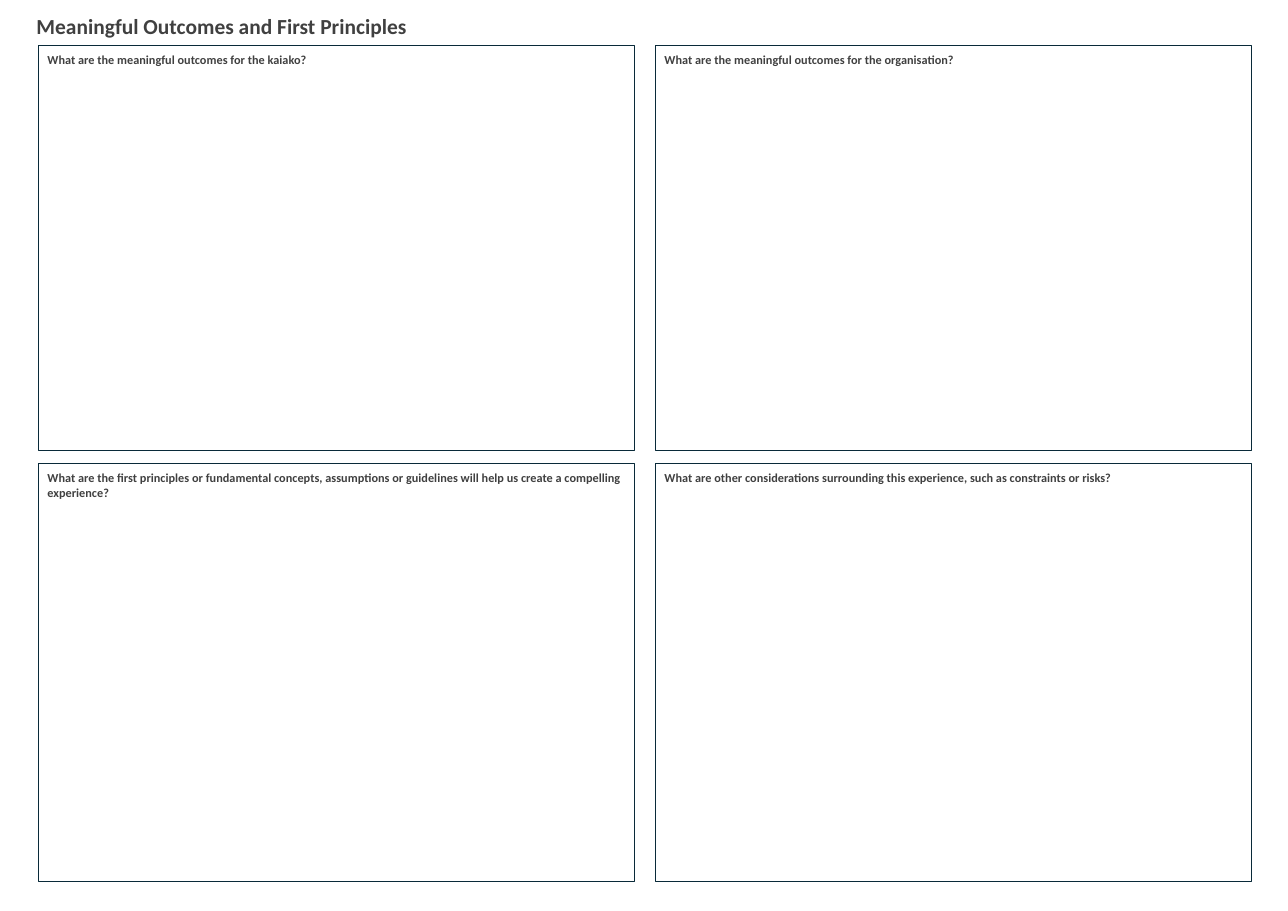
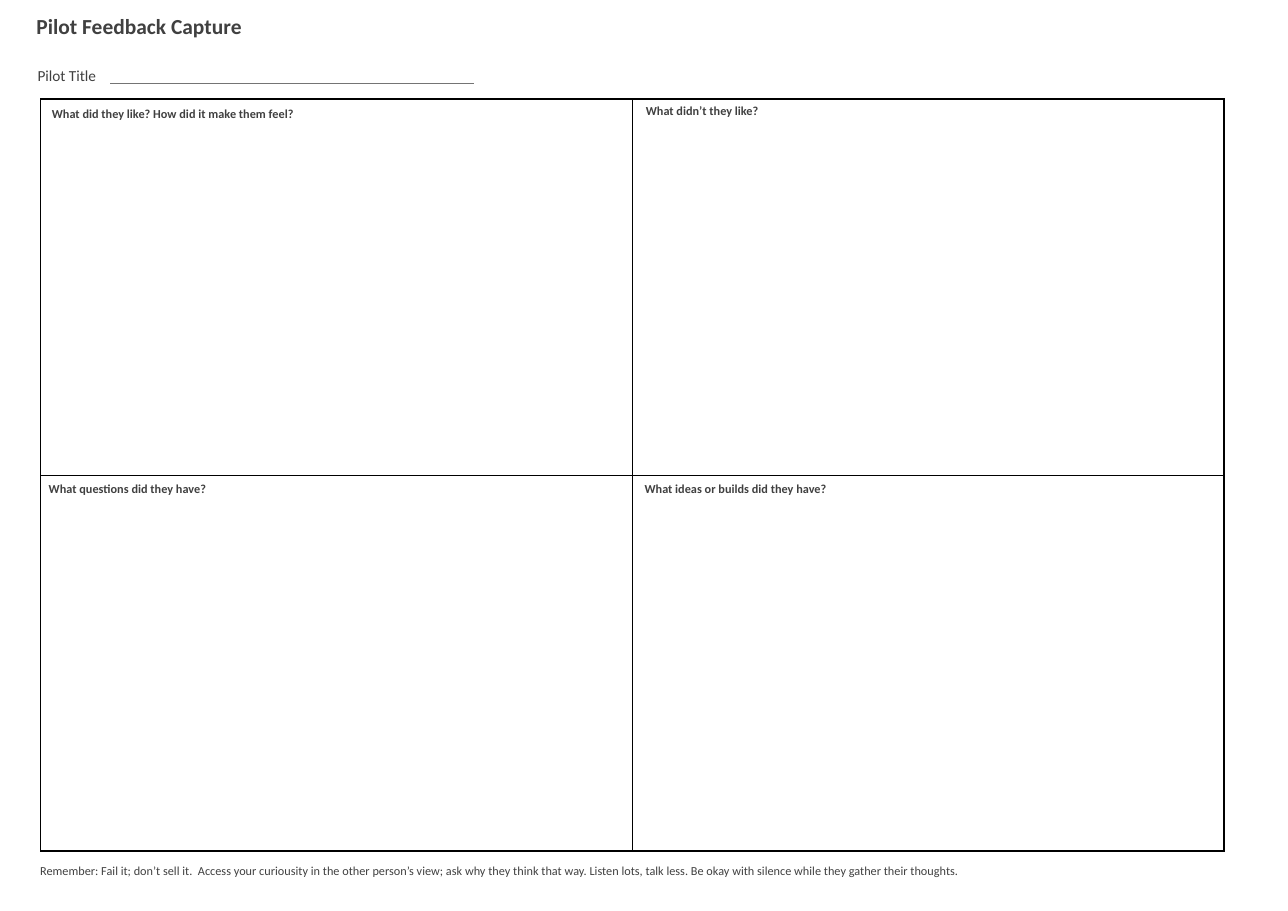
from itertools import product

from lxml.etree import SubElement
from pptx import Presentation
from pptx.dml.color import RGBColor
from pptx.enum.shapes import MSO_CONNECTOR as CONNECTOR, MSO_SHAPE as SHAPE
from pptx.enum.text import MSO_ANCHOR as ANCHOR, MSO_AUTO_SIZE as AUTO_SIZE, PP_ALIGN as ALIGN
from pptx.oxml.ns import qn
from pptx.util import Pt

INK = "404040"
FRAME = "092A39"
RULE = "747474"
GRID = "000000"
TITLE_ONLY = 5

TITLE = {"size": Pt(14), "bold": True}
QUESTION = {"size": Pt(8), "bold": True}
NOTE = {"size": Pt(8), "bold": False}
LABEL = {"size": Pt(10), "bold": False}
TITLE_INSETS = (7.2, 3.6)
BODY_INSETS = (2.2, 2.2)

OUTCOME_QUESTIONS = [
    ["What are the meaningful outcomes for the kaiako?",
     "What are the meaningful outcomes for the organisation?"],
    ["What are the first principles or fundamental concepts, assumptions or "
     "guidelines will help us create a compelling experience?",
     "What are other considerations surrounding this experience, such as constraints or risks?"],
]
FEEDBACK_QUESTIONS = [
    ("What did they like? How did it make them feel?", (31.7, 67, 377.3, 23)),
    ("What didn’t they like?", (419.8, 65.5, 207.4, 13.7)),
    ("What questions did they have?", (29.6, 312.5, 289.4, 16.6)),
    ("What ideas or builds did they have?", (419, 312.5, 207.4, 16.6)),
]
REMINDER = ("Remember: Fail it; don’t sell it.  Access your curiousity in the other person’s view; "
            "ask why they think that way. Listen lots, talk less. "
            "Be okay with silence while they gather their thoughts.")


def colour(value):
    return RGBColor.from_string(value)


def set_all(target, values):
    for name, value in values.items():
        setattr(target, name, value)


def points(*lengths):
    return [Pt(length) for length in lengths]


def write(frame, text, style, insets):
    side, top = points(*insets)
    set_all(frame, {
        "text": text, "word_wrap": True, "auto_size": AUTO_SIZE.NONE,
        "vertical_anchor": ANCHOR.TOP, "margin_left": side,
        "margin_right": side, "margin_top": top, "margin_bottom": top,
    })
    paragraph = frame.paragraphs[0]
    paragraph.alignment = ALIGN.LEFT
    font = paragraph.runs[0].font
    set_all(font, {"name": "Calibri", **style})
    font.color.rgb = colour(INK)


def add_titled_slide(deck, text):
    slide = deck.slides.add_slide(deck.slide_layouts[TITLE_ONLY])
    title = slide.shapes.title
    set_all(title, dict(zip(("left", "top", "width", "height"), points(16.6, 5, 487.4, 24.5))))
    write(title.text_frame, text, TITLE, TITLE_INSETS)
    return slide


def add_text(slide, text, box, style):
    write(slide.shapes.add_textbox(*points(*box)).text_frame, text, style, BODY_INSETS)


def add_frame(slide, box):
    frame = slide.shapes.add_shape(SHAPE.RECTANGLE, *points(*box))
    frame.shadow.inherit = False
    frame.fill.background()
    frame.line.color.rgb = colour(FRAME)
    frame.line.width = Pt(0.5)


def add_rule(slide, left, right, y):
    rule = slide.shapes.add_connector(CONNECTOR.STRAIGHT, *points(left, y, right, y))
    rule.line.color.rgb = colour(RULE)
    rule.line.width = Pt(1)
    SubElement(rule.element.spPr, qn("a:effectLst"))


def add_border(cell, side, width):
    border = SubElement(cell._tc.get_or_add_tcPr(), qn(f"a:ln{side}"), w=str(Pt(width)))
    fill = SubElement(border, qn("a:solidFill"))
    SubElement(fill, qn("a:srgbClr"), val=GRID)


def add_quadrants(slide, box):
    table = slide.shapes.add_table(2, 2, *points(*box)).table
    set_all(table, {"first_row": False, "horz_banding": False})
    for row, column in product(range(2), repeat=2):
        cell = table.cell(row, column)
        outer = {"L": column == 0, "R": column == 1, "T": row == 0, "B": row == 1}
        for side, is_outer in outer.items():
            add_border(cell, side, 1 if is_outer else 0.25)
        cell.fill.background()


def build_outcomes(deck):
    slide = add_titled_slide(deck, "Meaningful Outcomes and First Principles")
    width = 389.5
    bands = [(29.5, 265), (303.1, 272.9)]
    for (top, height), questions in zip(bands, OUTCOME_QUESTIONS):
        for column, question in enumerate(questions):
            left = 25.2 + column * 403.2
            add_text(slide, question, (left + 3.6, top + 2.2, width, 23.8), QUESTION)
            add_frame(slide, (left, top, width, height))


def build_feedback(deck):
    slide = add_titled_slide(deck, "Pilot Feedback Capture")
    add_quadrants(slide, (26.6, 64.8, 773.3, 491.4))
    for question, box in FEEDBACK_QUESTIONS:
        add_text(slide, question, box, QUESTION)
    add_text(slide, REMINDER, (24, 562.3, 786, 18), NOTE)
    add_text(slide, "Pilot Title", (22.3, 41, 337, 14.4), LABEL)
    add_rule(slide, 72, 309.6, 54.5)


def main():
    deck = Presentation()
    set_all(deck, {"slide_width": Pt(841.68), "slide_height": Pt(595.44)})
    build_outcomes(deck)
    build_feedback(deck)
    deck.save("out.pptx")


if __name__ == "__main__":
    main()
